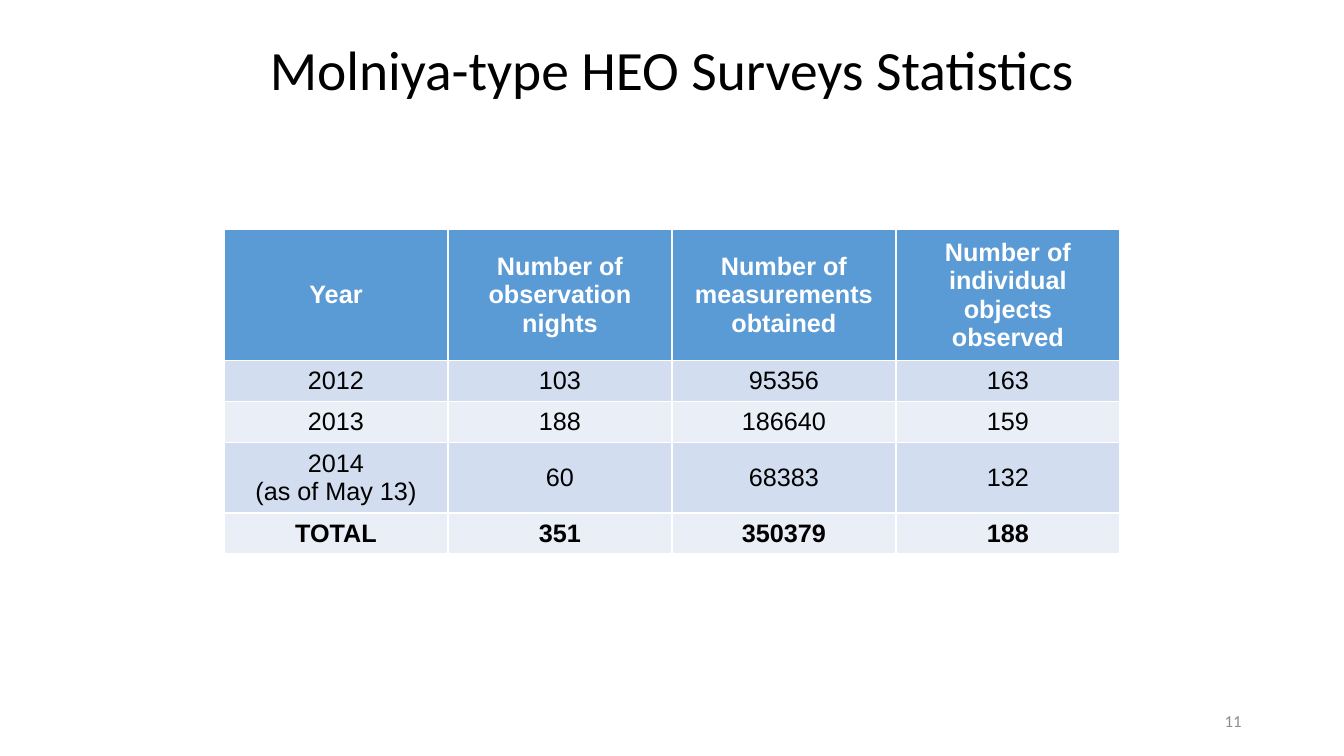
from pptx import Presentation
from pptx import util as u
from pptx.dml.color import RGBColor
from pptx.enum import text as t

HEADINGS = ["Year", "Number of observation nights",
            "Number of measurements obtained",
            "Number of individual objects observed"]
SURVEYS = [["2012", "103", "95356", "163"],
           ["2013", "188", "186640", "159"],
           ["2014\n(as of May 13)", "60", "68383", "132"],
           ["TOTAL", "351", "350379", "188"]]
HEADER_FILL = "5B9BD5"
BAND_FILLS = ["EAEFF7", "D2DEEF"]
COLUMN_WIDTH = 160
ROW_HEIGHT = 29.2


def color(value):
    return RGBColor.from_string(value)


def write(frame, content, size=18, font="Arial", fill="000000", bold=False,
          align=t.PP_ALIGN.CENTER, spacing=None):
    frame.word_wrap = True
    frame.vertical_anchor = t.MSO_ANCHOR.MIDDLE
    frame.text = content
    for para in frame.paragraphs:
        para.alignment = align
        para.line_spacing = spacing
        for span in para.runs:
            span.font.size = u.Pt(size)
            span.font.name = font
            span.font.bold = bold
            span.font.color.rgb = color(fill)


def add_title(page, content):
    title = page.shapes.title
    title.left, title.top = u.Pt(66), u.Pt(26)
    title.width, title.height = u.Pt(828), u.Pt(52)
    title.text_frame.auto_size = t.MSO_AUTO_SIZE.NONE
    write(title.text_frame, content, size=39.6, font="Calibri", spacing=0.9)


def add_page_number(page, number):
    box = page.shapes.add_textbox(u.Pt(678), u.Pt(500.5), u.Pt(216), u.Pt(28.8))
    write(box.text_frame, number, size=12, font="Calibri", fill="8C8C8C",
          align=t.PP_ALIGN.RIGHT)


def add_statistics(page, rows):
    count = len(rows[0])
    table = page.shapes.add_table(
        len(rows), count, u.Pt(160), u.Pt(164),
        u.Pt(COLUMN_WIDTH * count), u.Pt(ROW_HEIGHT * len(rows))).table
    for row_index, values in enumerate(rows):
        header = row_index == 0
        total = row_index == len(rows) - 1
        band = HEADER_FILL if header else BAND_FILLS[row_index % 2]
        for column_index, value in enumerate(values):
            cell = table.cell(row_index, column_index)
            cell.fill.solid()
            cell.fill.fore_color.rgb = color(band)
            write(cell.text_frame, value, bold=header or total,
                  fill="FFFFFF" if header else "000000")
            cell.vertical_anchor = t.MSO_ANCHOR.MIDDLE


def main():
    deck = Presentation()
    deck.slide_width, deck.slide_height = u.Pt(960), u.Pt(540)
    page = deck.slides.add_slide(deck.slide_layouts[5])
    add_title(page, "Molniya-type HEO Surveys Statistics")
    add_page_number(page, "11")
    add_statistics(page, [HEADINGS] + SURVEYS)
    deck.save("out.pptx")


if __name__ == "__main__":
    main()
